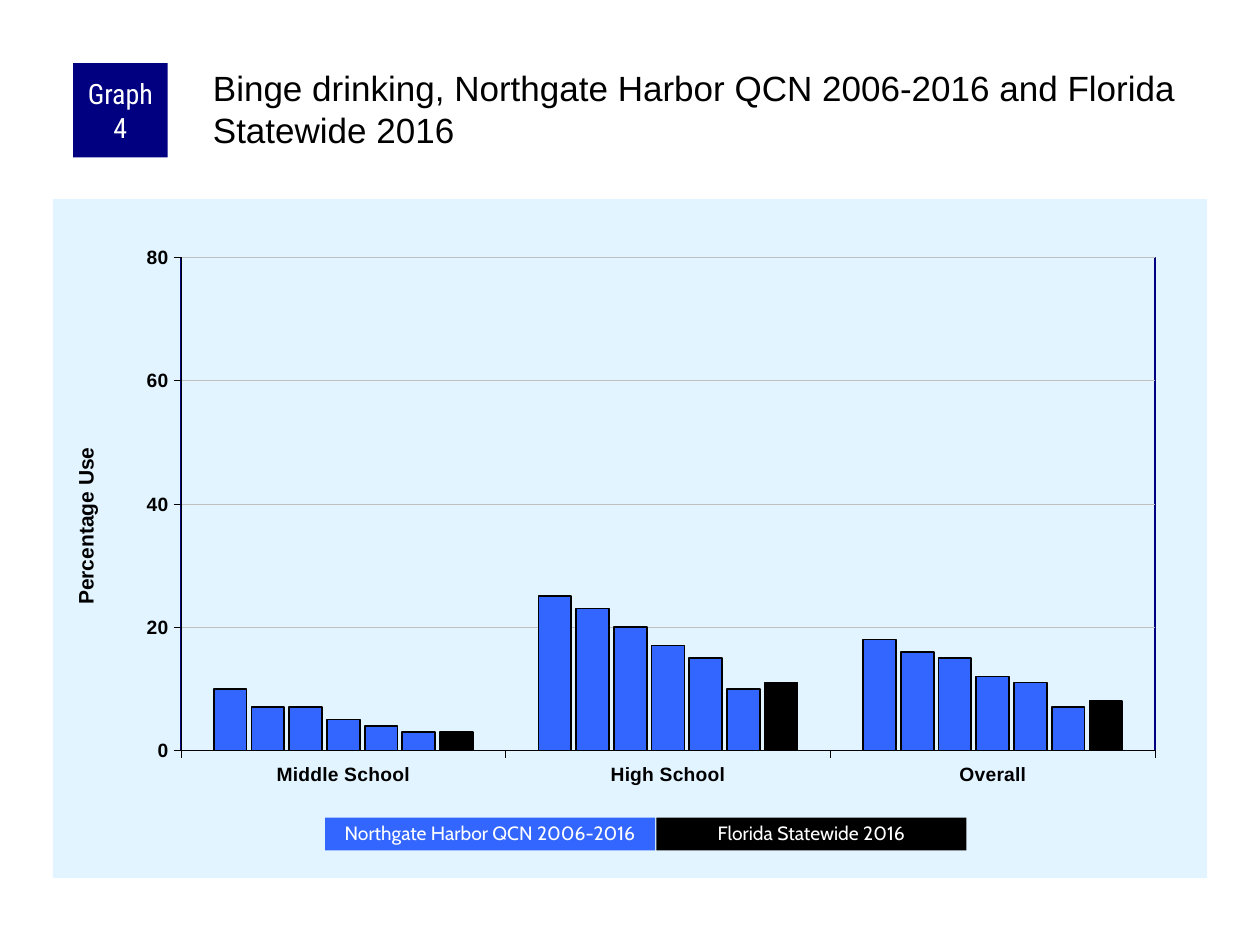
from lxml import etree
from pptx import Presentation
from pptx.chart.data import CategoryChartData
from pptx.dml.color import RGBColor
from pptx.enum.chart import XL_CHART_TYPE as ChartType, XL_TICK_MARK as TickMark
from pptx.enum.shapes import MSO_SHAPE as Shape
from pptx.enum.text import MSO_ANCHOR as Anchor, MSO_AUTO_SIZE as AutoSize, PP_ALIGN as Align
from pptx.oxml import parse_xml
from pptx.oxml.ns import nsdecls, qn
from pptx.util import Inches, Pt

TITLE = "Binge drinking, Northgate Harbor QCN 2006-2016 and Florida Statewide 2016"
BLUE, BLACK, NAVY, WHITE = "3366FF", "000000", "000080", "FFFFFF"
CATEGORIES = ["Middle School", "High School", "Overall"]
REGION = [(10, 25, 18), (7, 23, 16), (7, 20, 15), (5, 17, 12), (4, 15, 11), (3, 10, 7)]
STATEWIDE = (3, 11, 8)
LEGEND = [
    ("Northgate Harbor QCN 2006-2016", 2.58, 2.62, BLUE),
    ("Florida Statewide 2016", 5.21, 2.46, BLACK),
]


def color(value):
    return RGBColor.from_string(value)


def set_font(font, name, size, value, bold=False):
    font.name, font.size, font.bold = name, Pt(size), bold
    font.color.rgb = color(value)


def set_line(line, value, width):
    line.color.rgb = color(value)
    line.width = Pt(width)


def place(item, left, top, width, height):
    item.left, item.top, item.width, item.height = map(Inches, (left, top, width, height))


def set_layout(element, index, **values):
    """Give a chart part a manual layout at the given child index."""
    for old in element.findall(qn("c:layout")):
        element.remove(old)
    layout = parse_xml(f"<c:layout {nsdecls('c')}><c:manualLayout/></c:layout>")
    for name, value in values.items():
        etree.SubElement(layout[0], qn(f"c:{name}")).set("val", str(value))
    element.insert(index, layout)


def add_label(page, text, bounds, fill, font, size, spacing=1.0):
    box = page.shapes.add_shape(Shape.RECTANGLE, *map(Inches, bounds))
    box.shadow.inherit = False
    box.fill.solid()
    box.fill.fore_color.rgb = color(fill)
    box.line.fill.background()
    frame = box.text_frame
    frame.text, frame.word_wrap, frame.vertical_anchor = text, True, Anchor.MIDDLE
    para = frame.paragraphs[0]
    para.alignment, para.line_spacing = Align.CENTER, spacing
    set_font(para.runs[0].font, font, size, WHITE)
    return frame


def add_title(page):
    box = page.shapes.title
    place(box, 1.66, 0.5, 7.92, 0.83)
    frame = box.text_frame
    frame.text, frame.word_wrap = TITLE, True
    frame.auto_size, frame.vertical_anchor = AutoSize.NONE, Anchor.TOP
    frame.margin_left = frame.margin_top = Inches(0.03)
    frame.margin_right = frame.margin_bottom = 0
    frame.paragraphs[0].alignment = Align.LEFT
    set_font(frame.paragraphs[0].runs[0].font, "Arial", 20, BLACK)


def add_bars(page):
    data = CategoryChartData()
    data.categories = CATEGORIES
    for number, values in enumerate(REGION + [STATEWIDE], 1):
        data.add_series(f"Series {number}", values)
    bounds = map(Inches, (0.42, 1.58, 9.16, 5.39))
    chart = page.shapes.add_chart(ChartType.COLUMN_CLUSTERED, *bounds, data).chart
    chart.has_legend = chart.has_title = False
    set_font(chart.font, "Arial", 8, BLACK)
    plot = chart.plots[0]
    plot.gap_width, plot.overlap, plot.vary_by_categories = 200, -15, False
    for number, series in enumerate(plot.series):
        series.format.fill.solid()
        series.format.fill.fore_color.rgb = color(BLUE if number < len(REGION) else BLACK)
        set_line(series.format.line, BLACK, 1)
    for axis in (chart.category_axis, chart.value_axis):
        axis.major_tick_mark, axis.minor_tick_mark = TickMark.OUTSIDE, TickMark.NONE
        set_font(axis.tick_labels.font, "Arial", 11, BLACK, True)
        set_line(axis.format.line, BLACK, 0.25)
    axis = chart.value_axis
    axis.minimum_scale, axis.maximum_scale, axis.major_unit = 0, 80, 20
    set_line(axis.major_gridlines.format.line, "C0C0C0", 0.25)
    title = axis.axis_title
    title.text_frame.text = "Percentage Use"
    set_font(title.text_frame.paragraphs[0].runs[0].font, "Arial", 12, BLACK, True)
    body = title._element.find(".//" + qn("a:bodyPr"))
    body.set("rot", "-5400000")
    body.set("vert", "horz")
    set_layout(title._element, 1, xMode="edge", yMode="edge", x=0.014, y=0.36)
    style_areas(chart)


def style_areas(chart):
    area = chart._chartSpace.chart.plotArea
    set_layout(area, 0, layoutTarget="inner", xMode="edge", yMode="edge",
               x=0.111, y=0.086, w=0.844, h=0.726)
    area.append(parse_xml(
        f'<c:spPr {nsdecls("c", "a")}><a:noFill/><a:ln w="{Pt(1)}"><a:solidFill>'
        f'<a:srgbClr val="{NAVY}"/></a:solidFill></a:ln></c:spPr>'))
    chart._chartSpace.chart.addnext(parse_xml(
        f'<c:spPr {nsdecls("c", "a")}><a:solidFill><a:srgbClr val="E1F4FF"/></a:solidFill>'
        '<a:ln><a:noFill/></a:ln></c:spPr>'))


def main():
    deck = Presentation()
    deck.slide_width, deck.slide_height = Inches(10), Inches(7.5)
    page = deck.slides.add_slide(deck.slide_layouts[5])
    add_title(page)
    add_bars(page)
    frame = add_label(page, "Graph 4", (0.58, 0.5, 0.75, 0.75), NAVY, "Roboto Condensed", 16)
    frame.margin_left = frame.margin_right = Inches(0.05)
    frame.margin_top = frame.margin_bottom = 0
    for text, left, width, fill in LEGEND:
        add_label(page, text, (left, 6.49, width, 0.26), fill, "Cabin", 11, 0.9)
    deck.save("out.pptx")


if __name__ == "__main__":
    main()
